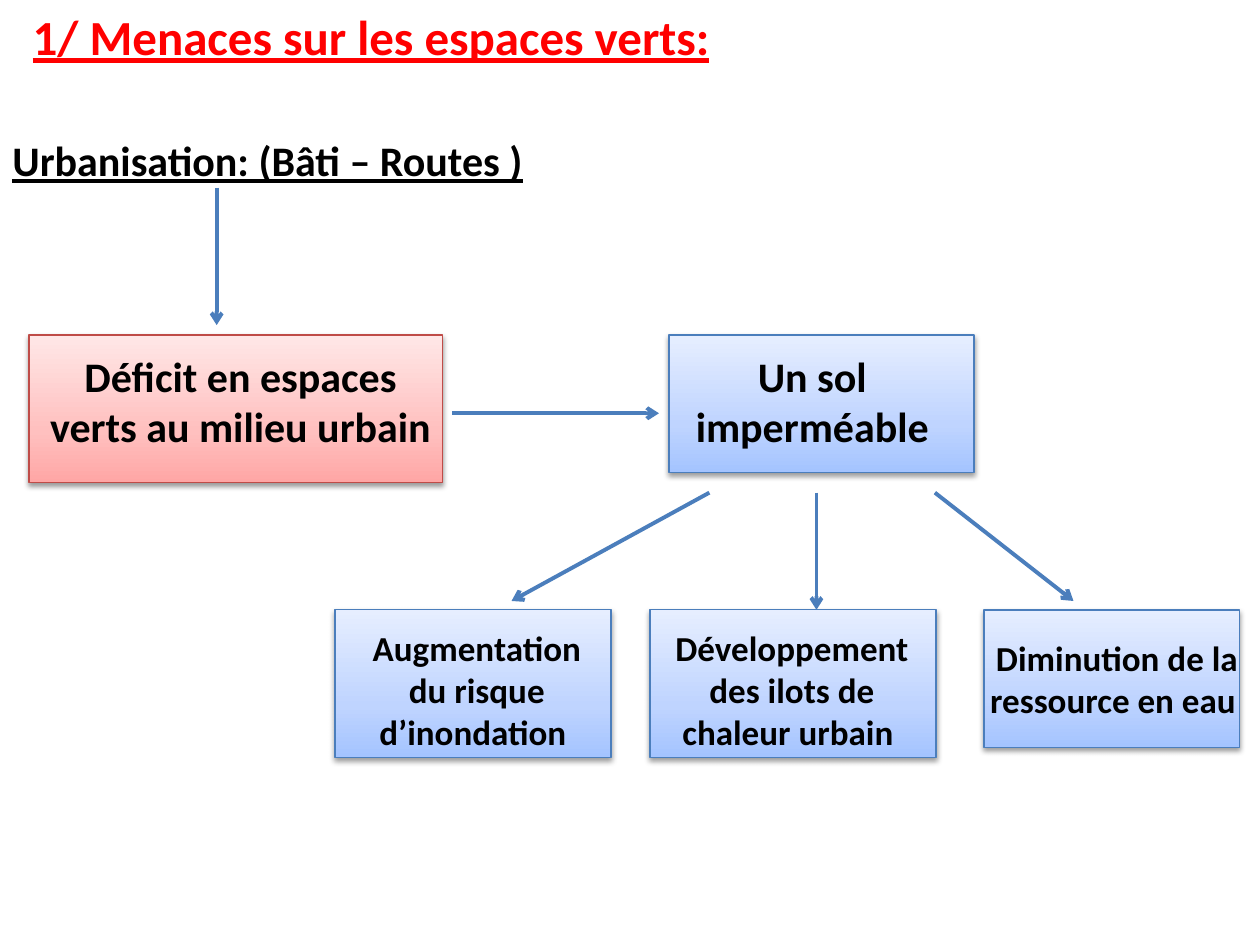
from dataclasses import dataclass

from pptx import Presentation
from pptx.dml.color import RGBColor
from pptx.enum.shapes import MSO_CONNECTOR, MSO_SHAPE
from pptx.enum.text import MSO_ANCHOR, MSO_AUTO_SIZE, PP_ALIGN
from pptx.oxml import parse_xml
from pptx.oxml.ns import nsdecls
from pptx.util import Inches, Pt


@dataclass(frozen=True)
class Theme:
    font: str = "Calibri"
    ink: str = "000000"
    title: str = "FF0000"
    blue: str = "4B7EBC"
    red: str = "BF4C48"
    blues: tuple = ("A4C4FF", "BFD4FF", "E6EEFF")
    reds: tuple = ("FFA6A5", "FFC0BF", "FFE7E7")
    big: int = 28
    mid: int = 24
    small: int = 20
    edge: float = 0.75
    arrow: float = 2.25


theme = Theme()


def write(shape, text, size, color=theme.ink, align=PP_ALIGN.CENTER, under=None):
    frame = shape.text_frame
    frame.text = text
    frame.word_wrap = True
    frame.vertical_anchor = MSO_ANCHOR.TOP
    frame.auto_size = MSO_AUTO_SIZE.SHAPE_TO_FIT_TEXT
    for para in frame.paragraphs:
        para.alignment = align
        for run in para.runs:
            font = run.font
            font.name, font.size = theme.font, Pt(size)
            font.bold, font.underline = True, under
            font.color.rgb = RGBColor.from_string(color)


def paint(shape, stops, edge):
    """Give a box its upward gradient, thin edge and soft shadow."""
    marks = "".join(
        f'<a:gs pos="{pos}"><a:srgbClr val="{color}"/></a:gs>'
        for pos, color in zip((0, 35000, 100000), stops)
    )
    props = shape._element.spPr
    props.append(parse_xml(
        f'<a:gradFill {nsdecls("a")} rotWithShape="1"><a:gsLst>{marks}</a:gsLst>'
        '<a:lin ang="16200000" scaled="1"/></a:gradFill>'
    ))
    shape.line.color.rgb = RGBColor.from_string(edge)
    shape.line.width = Pt(theme.edge)
    props.append(parse_xml(
        f'<a:effectLst {nsdecls("a")}>'
        '<a:outerShdw blurRad="40000" dist="20000" dir="5400000" rotWithShape="0">'
        '<a:srgbClr val="000000"><a:alpha val="38000"/></a:srgbClr>'
        '</a:outerShdw></a:effectLst>'
    ))


deck = Presentation()
deck.slide_width, deck.slide_height = Inches(10), Inches(7.5)
slide = deck.slides.add_slide(deck.slide_layouts[5])
shapes = slide.shapes

# Headings
title = shapes.title
title.left, title.top = Inches(0.16), Inches(0)
title.width, title.height = Inches(5.94), Inches(0.57)
write(title, "1/ Menaces sur les espaces verts:", theme.big, theme.title,
      PP_ALIGN.LEFT, True)

cause = shapes.add_textbox(Inches(0), Inches(1.02), Inches(4.45), Inches(0.5))
write(cause, "Urbanisation: (Bâti – Routes )", theme.mid,
      align=PP_ALIGN.LEFT, under=True)

# Boxes, each with its label: box place, label place, text, size, colours
red = (theme.reds, theme.red)
blue = (theme.blues, theme.blue)
top, low = 2.66, 4.84
boxes = [
    ((0.23, top, 3.28, 1.17), (0.23, 2.73, 3.36, 0.91),
     "Déficit en espaces verts au milieu urbain", theme.mid, red),
    ((5.31, top, 2.42, 1.09), (4.92, 2.73, 3.13, 0.91),
     "Un sol \nimperméable ", theme.mid, blue),
    ((2.66, low, 2.19, 1.17), (2.73, 4.92, 2.11, 1.11),
     "Augmentation du risque d’inondation ", theme.small, blue),
    ((5.16, low, 2.27, 1.17), (5.23, 4.92, 2.11, 1.11),
     "Développement des ilots de chaleur urbain ", theme.small, blue),
    ((7.81, low, 2.03, 1.09), (7.73, 5, 2.27, 0.77),
     "Diminution de la ressource en eau ", theme.small, blue),
]
for place, spot, text, size, colors in boxes:
    box = shapes.add_shape(MSO_SHAPE.RECTANGLE, *map(Inches, place))
    paint(box, *colors)
    label = shapes.add_textbox(*map(Inches, spot))
    write(label, text, size)

# Arrows from cause to effect
fork, tip = 3.91, 4.77
arrows = [
    (1.72, 1.49, 1.72, 2.58),
    (3.59, 3.28, 5.23, 3.28),
    (5.63, fork, 4.06, tip),
    (6.48, fork, 6.48, low),
    (7.42, fork, 8.52, tip),
]
for ends in arrows:
    arrow = shapes.add_connector(MSO_CONNECTOR.STRAIGHT, *map(Inches, ends))
    arrow.line.color.rgb = RGBColor.from_string(theme.blue)
    arrow.line.width = Pt(theme.arrow)
    arrow.line._get_or_add_ln().append(
        parse_xml(f'<a:tailEnd {nsdecls("a")} type="arrow"/>'))
    arrow._element.spPr.append(parse_xml(f'<a:effectLst {nsdecls("a")}/>'))

deck.save("out.pptx")
